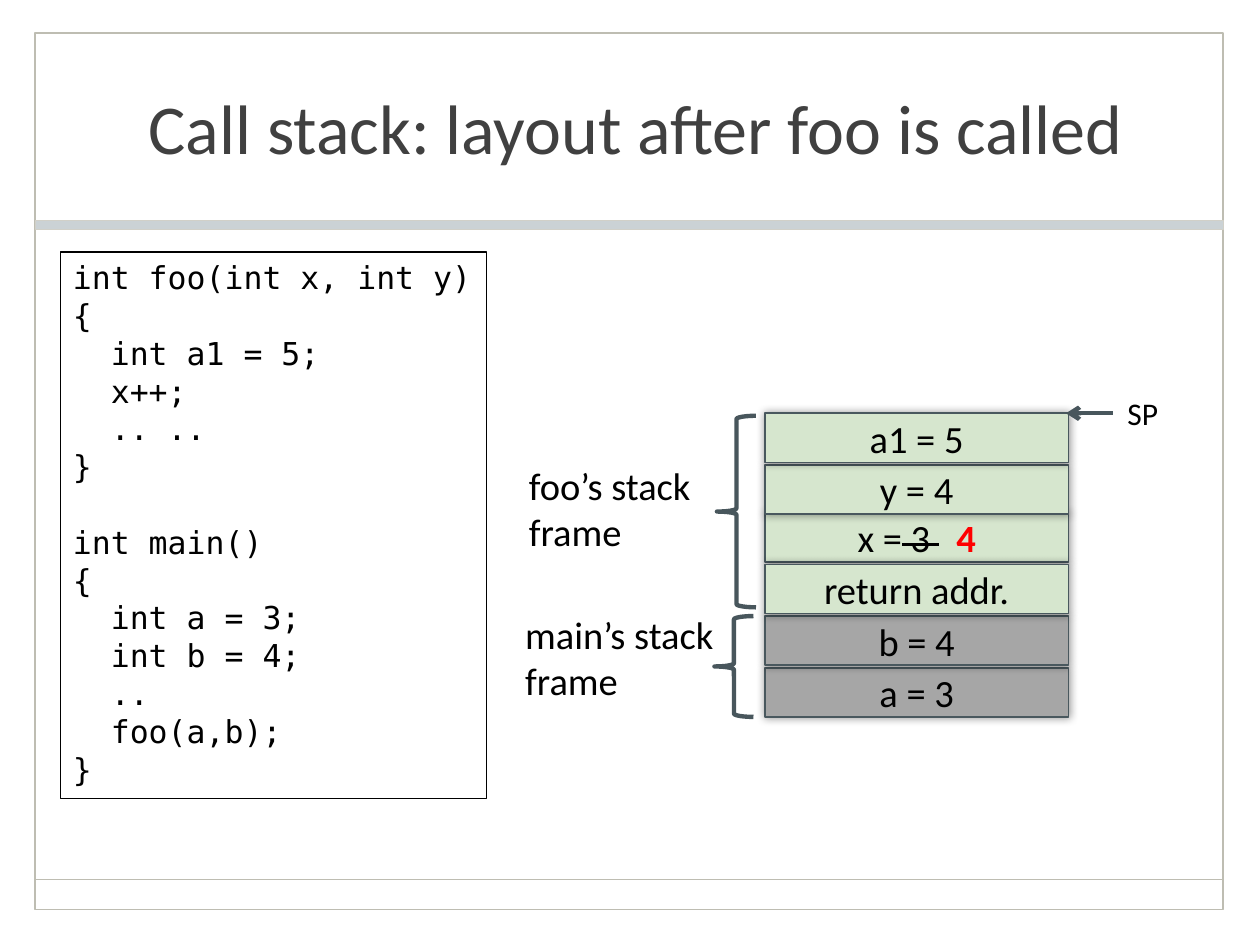
from pptx import Presentation
from pptx.dml.color import RGBColor
from pptx.enum.shapes import MSO_CONNECTOR, MSO_SHAPE
from pptx.enum.text import MSO_ANCHOR, MSO_AUTO_SIZE, PP_ALIGN
from pptx.oxml import parse_xml
from pptx.oxml.ns import nsdecls
from pptx.util import Emu, Pt

PX = 9144  # 100 px to the inch

BLACK = RGBColor(0x00, 0x00, 0x00)
RED = RGBColor(0xFF, 0x00, 0x00)
TITLE_GRAY = RGBColor(0x40, 0x40, 0x40)
FRAME = RGBColor(0xBE, 0xBD, 0xB2)
BAND = RGBColor(0xCB, 0xD2, 0xD5)
BAND_EDGE = RGBColor(0xD1, 0xD0, 0xC8)
GRAY = RGBColor(0xA6, 0xA6, 0xA6)
GREEN = RGBColor(0xD6, 0xE6, 0xCE)
CELL_EDGE = RGBColor(0x49, 0x58, 0x5E)
SLATE = RGBColor(0x48, 0x56, 0x5C)

SANS = "Calibri"
MONO = "DejaVu Sans Mono"

CODE = """int foo(int x, int y)
{
  int a1 = 5;
  x++;
  .. ..
}

int main()
{
  int a = 3;
  int b = 4;
  ..
  foo(a,b);
}"""

# top, fill, text runs
CELLS = [
    (530, GRAY, ["a = 3"]),
    (489, GRAY, ["b = 4"]),
    (407, GREEN, ["x =", " 3 ", "  ", "4"]),
    (369, GREEN, ["y = 4"]),
    (448, GREEN, ["return addr."]),
    (328, GREEN, ["a1 = 5"]),
]

# left, top, width, height, text, size
LABELS = [
    (407, 480, 178, 84, "main’s stack\nframe", 22),
    (410, 362, 156, 84, "foo’s stack\nframe", 22),
    (885, 308, 50, 40, "SP", 18),
]

BRACES = [(567, 489, 31, 80), (569, 330, 31, 152)]


def px(*lengths):
    return [Emu(n * PX) for n in lengths]


def style_text(tf, size, font=SANS, color=BLACK, align=PP_ALIGN.LEFT):
    for p in tf.paragraphs:
        p.alignment = align
        for r in p.runs:
            r.font.size = Pt(size)
            r.font.name = font
            r.font.color.rgb = color


def add_box(s, kind, box, fill, line, width):
    sp = s.shapes.add_shape(kind, *px(*box))
    sp.shadow.inherit = False
    if fill is None:
        sp.fill.background()
    else:
        sp.fill.solid()
        sp.fill.fore_color.rgb = fill
    sp.line.color.rgb = line
    sp.line.width = Pt(width)
    return sp


def add_line(s, ends, color, width):
    line = s.shapes.add_connector(MSO_CONNECTOR.STRAIGHT, *px(*ends))
    line.line.color.rgb = color
    line.line.width = Pt(width)
    line._element.spPr.append(parse_xml(f"<a:effectLst {nsdecls('a')}/>"))
    return line


def add_arrow(s, ends):
    ln = add_line(s, ends, SLATE, 2.5).line._get_or_add_ln()
    ln.append(parse_xml(f'<a:tailEnd {nsdecls("a")} type="arrow"/>'))


def add_glow_shadow(sp):
    """Give a shape a soft shadow that spreads evenly on all sides."""
    effects = sp._element.spPr.find("{*}effectLst")
    effects.append(parse_xml(
        f'<a:outerShdw {nsdecls("a")} blurRad="{Pt(5)}" dist="0" dir="0">'
        '<a:srgbClr val="000000"><a:alpha val="40000"/></a:srgbClr>'
        '</a:outerShdw>'))


def add_cell(s, top, fill, texts):
    sp = add_box(s, MSO_SHAPE.RECTANGLE, (607, top, 241, 39), fill, CELL_EDGE, 1)
    add_glow_shadow(sp)
    tf = sp.text_frame
    tf.vertical_anchor = MSO_ANCHOR.MIDDLE
    p = tf.paragraphs[0]
    for text in texts:
        p.add_run().text = text
    style_text(tf, 22, align=PP_ALIGN.CENTER)
    if len(texts) > 1:
        mark_update(p)


def mark_update(p):
    """Strike out the old value and show the new one in bold red."""
    _, old, _, new = p.runs
    old.font._element.set("strike", "sngStrike")
    new.font.bold = True
    new.font.color.rgb = RED


def add_label(s, left, top, width, height, text, size):
    tf = s.shapes.add_textbox(*px(left, top, width, height)).text_frame
    tf.word_wrap = False
    tf.auto_size = MSO_AUTO_SIZE.SHAPE_TO_FIT_TEXT
    tf.text = text
    style_text(tf, size)


def add_code(s):
    sp = add_box(s, MSO_SHAPE.RECTANGLE, (48, 200, 338, 434), None, BLACK, 0.75)
    tf = sp.text_frame
    tf.word_wrap = False
    tf.auto_size = MSO_AUTO_SIZE.SHAPE_TO_FIT_TEXT
    tf.vertical_anchor = MSO_ANCHOR.TOP
    tf.text = CODE
    style_text(tf, 18, MONO)


def set_title(s, text):
    title = s.shapes.title
    title.left, title.top, title.width, title.height = px(48, 27, 913, 147)
    tf = title.text_frame
    tf.text = text
    tf.vertical_anchor = MSO_ANCHOR.MIDDLE
    style_text(tf, 40, color=TITLE_GRAY, align=PP_ALIGN.CENTER)


def main():
    prs = Presentation()
    prs.slide_width, prs.slide_height = px(1000, 750)
    s = prs.slides.add_slide(prs.slide_layouts[5])

    add_box(s, MSO_SHAPE.RECTANGLE, (28, 26, 943, 696), None, FRAME, 1)
    add_line(s, (28, 698, 971, 698), FRAME, 1)
    add_box(s, MSO_SHAPE.RECTANGLE, (28, 175, 943, 7), BAND, BAND_EDGE, 0.25)
    set_title(s, "Call stack: layout after foo is called")
    add_code(s)
    for cell in CELLS:
        add_cell(s, *cell)
    for brace in BRACES:
        add_box(s, MSO_SHAPE.LEFT_BRACE, brace, None, SLATE, 2.5)
    for label in LABELS:
        add_label(s, *label)
    add_arrow(s, (883, 328, 846, 328))

    prs.save("out.pptx")


if __name__ == "__main__":
    main()
